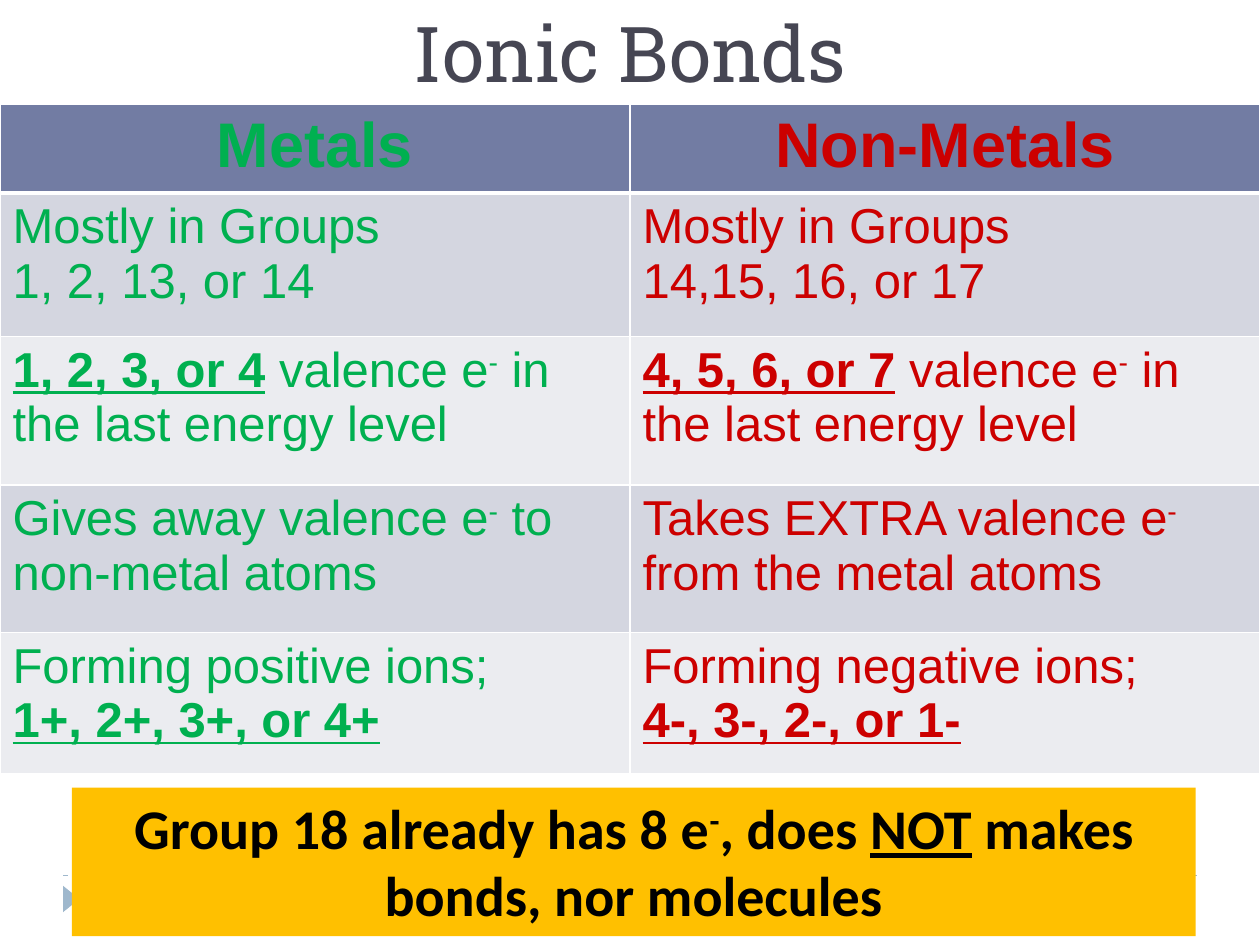
from dataclasses import dataclass

from lxml import etree
from pptx import Presentation
from pptx import util as u
from pptx.dml.color import RGBColor
from pptx.enum import dml, shapes, text
from pptx.oxml import ns

Inches, Pt = u.Inches, u.Pt


@dataclass(frozen=True)
class Theme:
    title: str = "464653"
    metal: str = "00B050"
    non_metal: str = "CC0000"
    header: str = "727CA3"
    bands: tuple = ("D4D6E0", "EBECF0")
    border: str = "FFFFFF"
    accent: str = "9FB8CD"
    note: str = "FFC000"
    note_text: str = "000000"
    title_font: str = "Roboto Slab"
    table_font: str = "Arial"
    note_font: str = "Calibri"
    title_size: int = 44
    header_size: int = 36
    body_size: int = 28
    note_size: int = 32


THEME = Theme()

# Run styles: B bold, U underlined, ^ superscript.
# A cell is a list of paragraphs, a paragraph a list of (text, style) runs.
METALS = [
    [[("Metals", "B")]],
    [[("Mostly in Groups", "")], [("1, 2, 13, or 14", "")]],
    [[("1, 2, 3, or 4", "BU"), (" valence e", ""), ("-", "^"),
      (" in the last energy level", "")]],
    [[("Gives away valence e", ""), ("-", "^"), (" to non-metal atoms", "")]],
    [[("Forming positive ions;", "")], [("1+, 2+, 3+, or 4+", "BU")]],
]
NON_METALS = [
    [[("Non-Metals", "B")]],
    [[("Mostly in Groups", "")], [("14,15, 16, or 17", "")]],
    [[("4, 5, 6, or 7", "BU"), (" valence e", ""), ("-", "^"),
      (" in the last energy level", "")]],
    [[("Takes EXTRA valence e", ""), ("-", "^"), (" from the metal atoms", "")]],
    [[("Forming negative ions;", "")], [("4-, 3-, 2-, or 1-", "BU")]],
]
ROW_HEIGHTS = (0.65, 1.14, 1.18, 1.17, 1.12)
NOTE = [[("Group 18 already has 8 e", "B"), ("-", "B^"), (", does ", "B"),
         ("NOT", "BU"), (" makes bonds, nor molecules", "B")]]


def rgb(value):
    return RGBColor.from_string(value)


def write(frame, paragraphs, font, size, color, align=text.PP_ALIGN.LEFT):
    frame.word_wrap = True
    for index, runs in enumerate(paragraphs):
        paragraph = frame.add_paragraph() if index else frame.paragraphs[0]
        paragraph.alignment = align
        for words, style in runs:
            run = paragraph.add_run()
            run.text = words
            run.font.name, run.font.size = font, Pt(size)
            run.font.color.rgb = rgb(color)
            run.font.bold = "B" in style
            run.font.underline = "U" in style
            if "^" in style:
                run.font._element.set("baseline", "30000")


def set_borders(cell, bottom_width):
    properties = cell._tc.get_or_add_tcPr()
    widths = {"lnL": 1, "lnR": 1, "lnT": 1, "lnB": bottom_width}
    for index, (side, width) in enumerate(widths.items()):
        line = etree.Element(ns.qn(f"a:{side}"), w=str(Pt(width)))
        fill = etree.SubElement(line, ns.qn("a:solidFill"))
        etree.SubElement(fill, ns.qn("a:srgbClr"), val=THEME.border)
        properties.insert(index, line)


def add_footer_mark(slide, left, top, width):
    """Dashed rule with a small arrow below its left end."""
    rule = slide.shapes.add_connector(
        shapes.MSO_CONNECTOR.STRAIGHT, left, top, left + width, top)
    rule.line.color.rgb = rgb(THEME.accent)
    rule.line.width = Pt(0.75)
    rule.line.dash_style = dml.MSO_LINE.DASH
    etree.SubElement(rule._element.spPr, ns.qn("a:effectLst"))

    arrow = slide.shapes.add_shape(
        shapes.MSO_SHAPE.ISOSCELES_TRIANGLE, left - Inches(0.04),
        top + Inches(0.12), Inches(0.21), Inches(0.13))
    arrow.rotation = 90
    arrow.shadow.inherit = False
    arrow.fill.solid()
    arrow.fill.fore_color.rgb = rgb(THEME.accent)
    arrow.line.fill.background()


def add_title(slide, left, top, width, height):
    title = slide.shapes.add_textbox(left, top, width, height).text_frame
    title.vertical_anchor = text.MSO_ANCHOR.BOTTOM
    write(title, [[("Ionic Bonds", "")]], THEME.title_font, THEME.title_size,
          THEME.title, text.PP_ALIGN.CENTER)


def add_comparison(slide, left, top, width):
    """Metals beside non-metals, one property per row."""
    columns = ((METALS, THEME.metal), (NON_METALS, THEME.non_metal))
    table = slide.shapes.add_table(
        len(ROW_HEIGHTS), len(columns), left, top, width,
        Inches(sum(ROW_HEIGHTS))).table
    for row, height in zip(table.rows, ROW_HEIGHTS):
        row.height = Inches(height)
    for column, (entries, color) in enumerate(columns):
        table.columns[column].width = width // len(columns)
        for row, paragraphs in enumerate(entries):
            cell = table.cell(row, column)
            is_header = row == 0
            cell.fill.solid()
            cell.fill.fore_color.rgb = rgb(
                THEME.header if is_header else THEME.bands[(row - 1) % 2])
            set_borders(cell, 3 if is_header else 1)
            write(cell.text_frame, paragraphs, THEME.table_font,
                  THEME.header_size if is_header else THEME.body_size, color,
                  text.PP_ALIGN.CENTER if is_header else text.PP_ALIGN.LEFT)


def add_note(slide, left, top, width, height):
    note = slide.shapes.add_shape(
        shapes.MSO_SHAPE.RECTANGLE, left, top, width, height)
    note.shadow.inherit = False
    note.fill.solid()
    note.fill.fore_color.rgb = rgb(THEME.note)
    note.line.fill.background()
    note.text_frame.vertical_anchor = text.MSO_ANCHOR.TOP
    write(note.text_frame, NOTE, THEME.note_font, THEME.note_size,
          THEME.note_text, text.PP_ALIGN.CENTER)


def main():
    deck = Presentation()
    deck.slide_width, deck.slide_height = Inches(10), Inches(7.5)
    slide = deck.slides.add_slide(deck.slide_layouts[6])
    add_footer_mark(slide, Inches(0.5), Inches(6.95), Inches(9))
    add_title(slide, Inches(0.5), Inches(0), Inches(9), Inches(0.83))
    add_comparison(slide, Inches(0), Inches(0.83), deck.slide_width)
    add_note(slide, Inches(0.57), Inches(6.25), Inches(8.92), Inches(1.18))
    deck.save("out.pptx")


if __name__ == "__main__":
    main()
